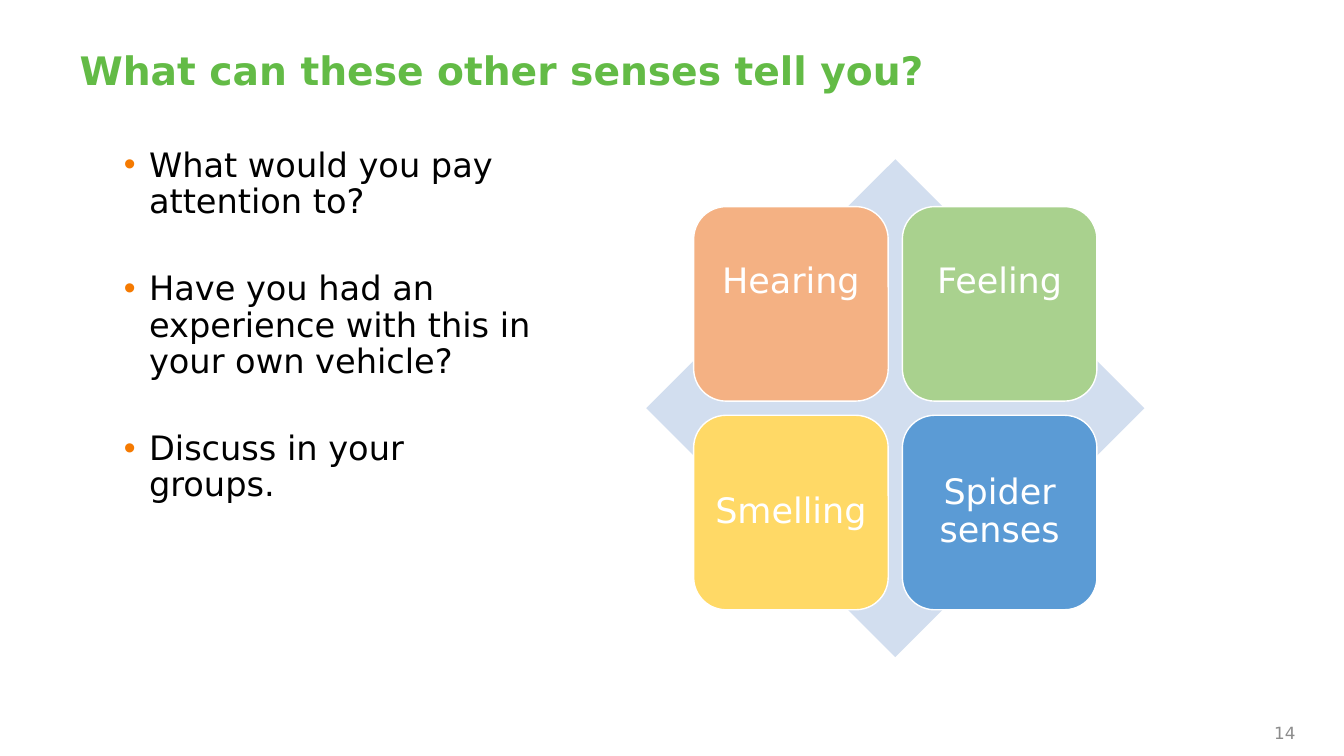
"""Build the slide on what the other senses can tell you."""
from dataclasses import dataclass

from lxml.etree import SubElement
from pptx import Presentation
from pptx.dml.color import RGBColor
from pptx.enum.shapes import MSO_SHAPE
from pptx.enum.text import MSO_ANCHOR, PP_ALIGN
from pptx.oxml.ns import qn
from pptx.util import Inches, Pt


@dataclass(frozen=True)
class Theme:
    font: str = "DejaVu Sans"
    title: str = "63BB46"
    body: str = "000000"
    bullet: str = "F57A01"
    number: str = "8C8C8C"
    diamond: str = "D2DEEF"
    white: str = "FFFFFF"
    hearing: str = "F4B183"
    feeling: str = "A9D18E"
    smelling: str = "FFD966"
    spider: str = "5B9BD5"
    title_size: int = 28
    body_size: int = 24
    sense_size: int = 25
    number_size: int = 12


def add_span(para, text, size, color, bold=False):
    span = para.add_run()
    span.text = text
    span.font.name = theme.font
    span.font.size = Pt(size)
    span.font.bold = bold
    span.font.color.rgb = RGBColor.from_string(color)


def set_frame(frame, anchor, inset, bottom):
    frame.word_wrap = True
    frame.vertical_anchor = anchor
    frame.margin_left = frame.margin_right = frame.margin_top = Inches(inset)
    frame.margin_bottom = Inches(bottom)


theme = Theme()
deck = Presentation()
deck.slide_width = Inches(13.33)
deck.slide_height = Inches(7.5)
page = deck.slides.add_slide(deck.slide_layouts[6])

title_box = page.shapes.add_textbox(Inches(0.79), Inches(0.47), Inches(11.75), Inches(0.51))
set_frame(title_box.text_frame, MSO_ANCHOR.MIDDLE, 0, 0)
para = title_box.text_frame.paragraphs[0]
para.line_spacing = 0.9
add_span(para, "What can these other senses tell you?", theme.title_size, theme.title, bold=True)

questions = [
    "What would you pay attention to?",
    "Have you had an experience with this in your own vehicle?",
    "Discuss in your groups.",
]
question_box = page.shapes.add_textbox(Inches(1.13), Inches(1.42), Inches(4.29), Inches(5.26))
question_box.text_frame.word_wrap = True
for index, question in enumerate(questions):
    para = question_box.text_frame.paragraphs[0]
    if index:
        para = question_box.text_frame.add_paragraph()
        para.space_before = Pt(36.5)
    para.line_spacing = 0.9
    properties = para._p.get_or_add_pPr()
    properties.set("marL", str(Inches(0.25)))
    properties.set("indent", str(Inches(-0.25)))
    bullet_color = SubElement(properties, qn("a:buClr"))
    SubElement(bullet_color, qn("a:srgbClr"), val=theme.bullet)
    SubElement(properties, qn("a:buFont"), typeface="Arial")
    SubElement(properties, qn("a:buChar"), char="•")
    add_span(para, question, theme.body_size, theme.body)

number_box = page.shapes.add_textbox(Inches(9.85), Inches(6.97), Inches(3), Inches(0.4))
set_frame(number_box.text_frame, MSO_ANCHOR.BOTTOM, 0, 0)
para = number_box.text_frame.paragraphs[0]
para.alignment = PP_ALIGN.RIGHT
add_span(para, "14", theme.number_size, theme.number)

diamond = page.shapes.add_shape(
    MSO_SHAPE.DIAMOND, Inches(6.41), Inches(1.58), Inches(4.94), Inches(4.94))
diamond.shadow.inherit = False
diamond.fill.solid()
diamond.fill.fore_color.rgb = RGBColor.from_string(theme.diamond)
diamond.line.fill.background()

senses = [
    ("Hearing", theme.hearing, 0.54),
    ("Feeling", theme.feeling, 0.54),
    ("Smelling", theme.smelling, 0.1),
    ("Spider senses", theme.spider, 0.1),
]
tile_size, tile_step = 1.93, 2.07
for index, (sense, color, bottom_inset) in enumerate(senses):
    row, column = divmod(index, 2)
    tile = page.shapes.add_shape(
        MSO_SHAPE.ROUNDED_RECTANGLE,
        Inches(6.88 + column * tile_step), Inches(2.05 + row * tile_step),
        Inches(tile_size), Inches(tile_size))
    tile.shadow.inherit = False
    tile.fill.solid()
    tile.fill.fore_color.rgb = RGBColor.from_string(color)
    tile.line.color.rgb = RGBColor.from_string(theme.white)
    tile.line.width = Pt(1)
    set_frame(tile.text_frame, MSO_ANCHOR.MIDDLE, 0.1, bottom_inset)
    para = tile.text_frame.paragraphs[0]
    para.alignment = PP_ALIGN.CENTER
    para.line_spacing = 0.9
    add_span(para, sense, theme.sense_size, theme.white)

deck.save("out.pptx")
